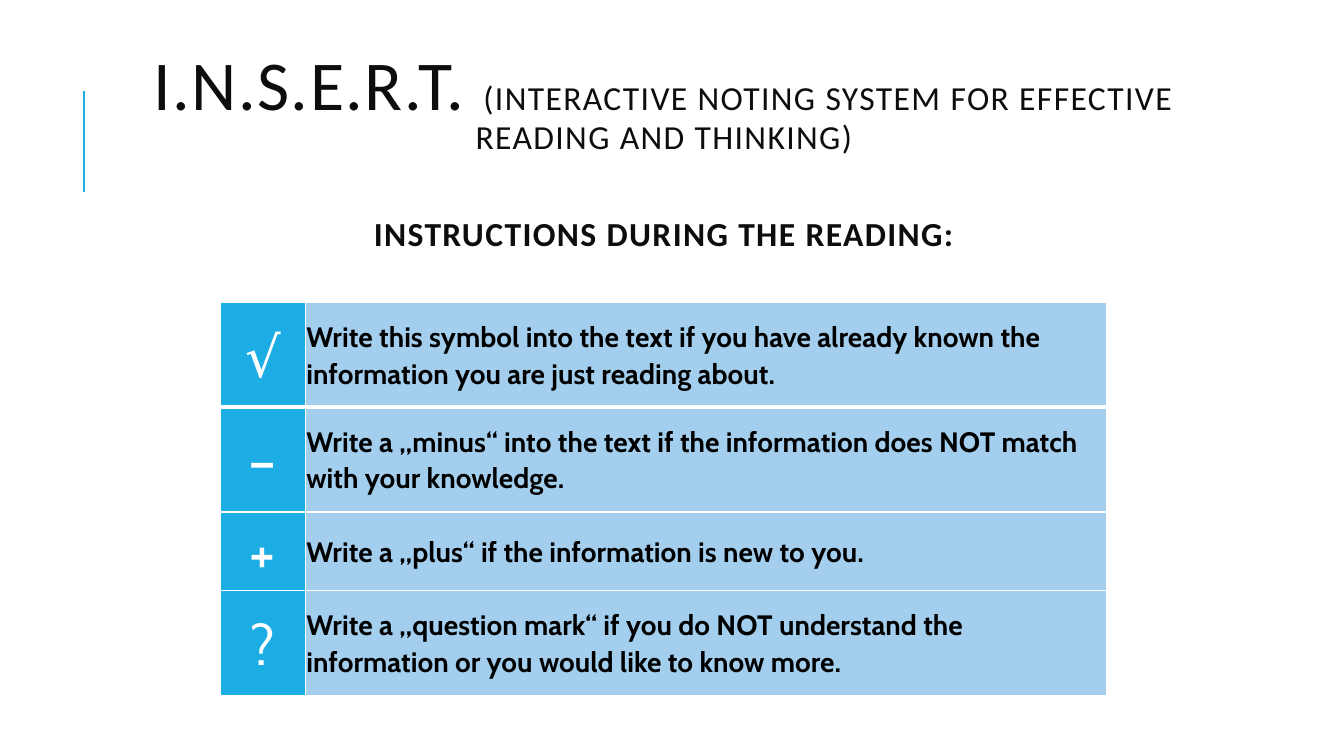
from dataclasses import dataclass

from lxml.etree import SubElement
from pptx import Presentation
from pptx.dml.color import RGBColor as Rgb
from pptx.enum.shapes import MSO_CONNECTOR as Connector
from pptx.enum.text import MSO_ANCHOR as Anchor, PP_ALIGN as Align
from pptx.oxml.ns import qn
from pptx.util import Cm, Pt


@dataclass(frozen=True)
class Theme:
    accent: str = "1CADE4"
    pale: str = "A3CEED"
    white: str = "FFFFFF"
    black: str = "000000"
    ink: str = "0D0D0D"
    title_font: str = "Calibri"
    body_font: str = "Cabin"
    title_size: int = 50
    subtitle_size: int = 24
    symbol_size: int = 40
    body_size: int = 20


@dataclass(frozen=True)
class Instruction:
    symbol: str
    meaning: str
    height: float
    rule_below: float = 1


THEME = Theme()
INSTRUCTIONS = [
    Instruction("√", "Write this symbol into the text if you have already known "
                "the information you are just reading about.", 2.64, 3),
    Instruction("–", "Write a „minus“ into the text if the information does NOT "
                "match with your knowledge.", 2.64),
    Instruction("+", "Write a „plus“ if the information is new to you.", 1.98),
    Instruction("?", "Write a „question mark“ if you do NOT understand the "
                "information or you would like to know more.", 2.64),
]
COLUMN_WIDTHS = (2.13, 20.19)


def add_span(para, text: str, *, font: str, size: int, color: str,
             bold: bool = False, spacing: int = 0) -> None:
    span = para.add_run()
    span.text = text
    span.font.name = font
    span.font.size = Pt(size)
    span.font.bold = bold
    span.font.color.rgb = Rgb.from_string(color)
    if spacing:
        span._r.get_or_add_rPr().set("spc", str(spacing * 100))


def add_accent_line(page) -> None:
    line = page.shapes.add_connector(
        Connector.STRAIGHT, Cm(2.12), Cm(4.83), Cm(2.12), Cm(2.29))
    line.line.color.rgb = Rgb.from_string(THEME.accent)
    line.line.width = Pt(1.5)
    SubElement(line._element.spPr, qn("a:effectLst"))


def add_title(page) -> None:
    box = page.shapes.add_textbox(Cm(2.13), Cm(1.43), Cm(29.21), Cm(5.77))
    frame = box.text_frame
    frame.word_wrap = True
    frame.vertical_anchor = Anchor.TOP
    frame.margin_top = frame.margin_bottom = 0
    title, heading = frame.paragraphs[0], frame.add_paragraph()
    for para in (title, heading):
        para.alignment = Align.CENTER
        para.line_spacing = 0.8
    heading.space_before = Pt(46)
    style = {"font": THEME.title_font, "color": THEME.ink, "spacing": 1}
    add_span(title, "I.N.S.E.R.T. ", size=THEME.title_size, **style)
    add_span(title, "(INTERACTIVE NOTING SYSTEM FOR EFFECTIVE READING AND THINKING)",
             size=THEME.subtitle_size, **style)
    add_span(heading, "INSTRUCTIONS DURING THE READING:",
             size=THEME.subtitle_size, bold=True, **style)


def add_borders(cell, bottom: float) -> None:
    properties = cell._tc.get_or_add_tcPr()
    for side, width in {"L": 1, "R": 1, "T": 1, "B": bottom}.items():
        border = SubElement(properties, qn(f"a:ln{side}"), w=str(Pt(width)))
        fill = SubElement(border, qn("a:solidFill"))
        SubElement(fill, qn("a:srgbClr"), val=THEME.white)


def fill_cell(cell, text: str, *, fill: str, color: str, size: int,
              bold: bool, align: Align, rule_below: float) -> None:
    add_borders(cell, rule_below)
    cell.fill.solid()
    cell.fill.fore_color.rgb = Rgb.from_string(fill)
    cell.vertical_anchor = Anchor.MIDDLE
    cell.margin_left = cell.margin_right = Cm(0.03)
    cell.margin_top = cell.margin_bottom = Cm(0.03)
    para = cell.text_frame.paragraphs[0]
    para.alignment = align
    para.line_spacing = 1.07
    add_span(para, text, font=THEME.body_font, size=size, color=color, bold=bold)


def add_instructions(page) -> None:
    table = page.shapes.add_table(
        len(INSTRUCTIONS), len(COLUMN_WIDTHS), Cm(5.56), Cm(7.62),
        Cm(sum(COLUMN_WIDTHS)), Cm(sum(item.height for item in INSTRUCTIONS))).table
    table.first_row = table.horz_banding = False
    for column, width in zip(table.columns, COLUMN_WIDTHS):
        column.width = Cm(width)
    for index, item in enumerate(INSTRUCTIONS):
        table.rows[index].height = Cm(item.height)
        fill_cell(table.cell(index, 0), item.symbol, fill=THEME.accent,
                  color=THEME.white, size=THEME.symbol_size, bold=False,
                  align=Align.CENTER, rule_below=item.rule_below)
        fill_cell(table.cell(index, 1), item.meaning, fill=THEME.pale,
                  color=THEME.black, size=THEME.body_size, bold=True,
                  align=Align.LEFT, rule_below=item.rule_below)


def main() -> None:
    deck = Presentation()
    deck.slide_width, deck.slide_height = Cm(33.87), Cm(19.05)
    page = deck.slides.add_slide(deck.slide_layouts[6])
    add_accent_line(page)
    add_title(page)
    add_instructions(page)
    deck.save("out.pptx")


if __name__ == "__main__":
    main()
